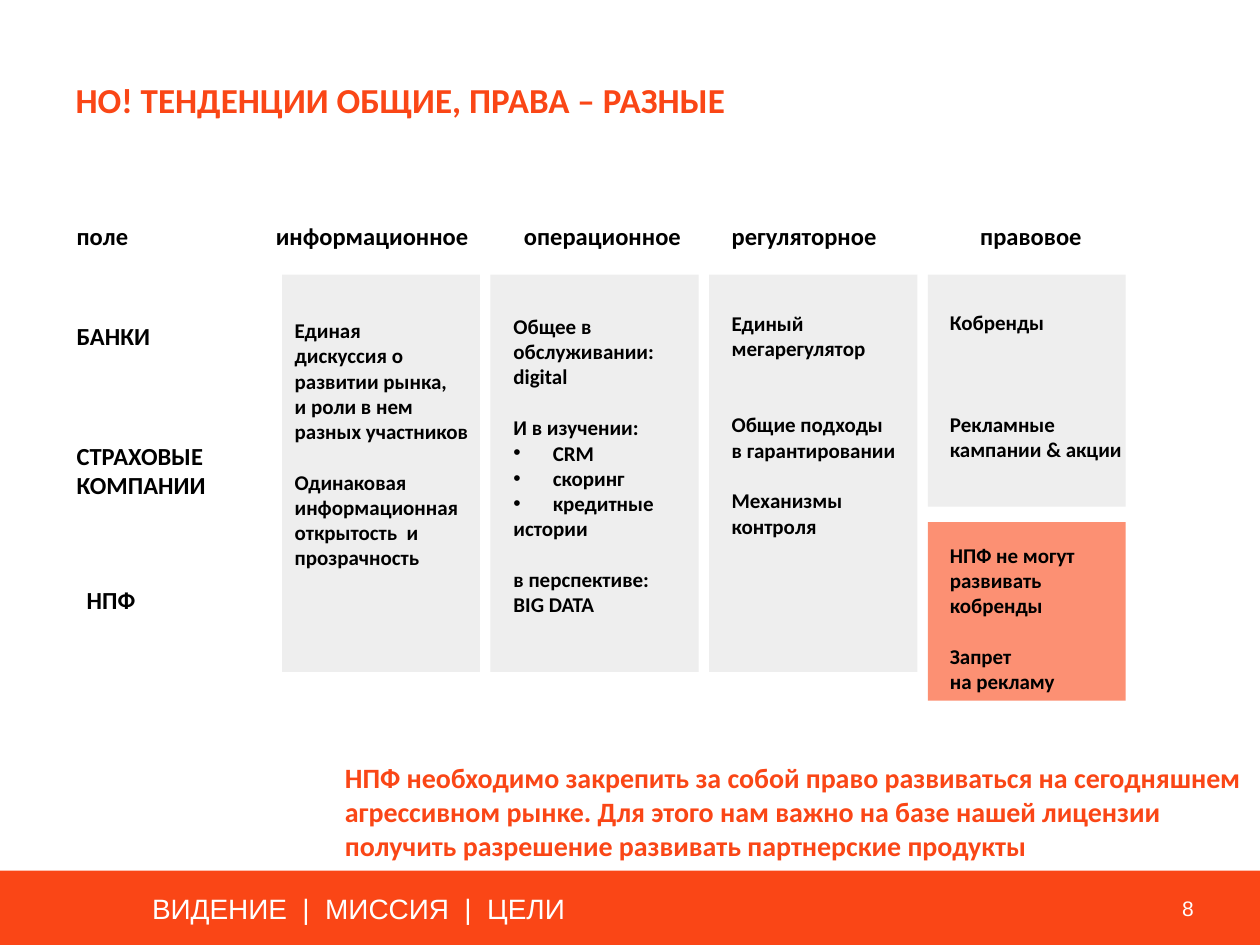
from lxml import etree
from pptx import Presentation
from pptx.dml.color import RGBColor
from pptx.enum.shapes import MSO_SHAPE
from pptx.enum.text import MSO_ANCHOR, PP_ALIGN
from pptx.oxml.ns import qn
from pptx.util import Pt

RECTANGLE = MSO_SHAPE.RECTANGLE
TOP = MSO_ANCHOR.TOP
LEFT, RIGHT = PP_ALIGN.LEFT, PP_ALIGN.RIGHT
ORANGE, SALMON, GRAY = "FA4616", "FC9073", "EEEEEE"
BLACK, WHITE = "000000", "FFFFFF"
BLANK_LINE = 14.65
BULLET_INDENT = 22.5
LABEL_WIDTH = 153.5
COLUMN_GAP = 6

BULLETED = {"CRM", "скоринг", "кредитные"}
COLUMNS = [
    {"header": "информационное", "header_left": 150.5, "width": 113, "height": 227,
     "text_left": 161.3, "text_top": 178,
     "groups": [(0, ["Единая", "дискуссия о", "развитии рынка,", "и роли в нем",
                     "разных участников"]),
                (1, ["Одинаковая", "информационная открытость  и прозрачность"])]},
    {"header": "операционное", "header_left": 292.3, "width": 119, "height": 227,
     "text_left": 286.3, "text_top": 175.7,
     "groups": [(0, ["Общее в", "обслуживании:", "digital"]),
                (1, ["И в изучении:", "CRM", "скоринг", "кредитные", "истории"]),
                (1, ["в перспективе:", "BIG DATA"])]},
    {"header": "регуляторное", "header_left": 411, "width": 119, "height": 227,
     "text_left": 411, "text_top": 173.7,
     "groups": [(0, ["Единый", "мегарегулятор"]),
                (2, ["Общие подходы", "в гарантировании"]),
                (1, ["Механизмы", "контроля"])]},
    {"header": "правовое", "header_left": 553, "width": 113, "height": 132.5,
     "text_left": 535.7, "text_top": 173.3,
     "groups": [(0, ["Кобренды"]), (3, ["Рекламные", "кампании & акции"])]},
]
RESTRICTIONS = [(0, ["НПФ не могут", "развивать", "кобренды"]),
                (1, ["Запрет", "на рекламу"])]
ROW_LABELS = [
    ("поле", 36.7, 123),
    ("БАНКИ", 36.7, 180),
    ("СТРАХОВЫЕ\nКОМПАНИИ", 36.7, 248.4),
    ("НПФ", 42.5, 330.5),
]


def color(value):
    """Turn a hex string into a colour."""
    return RGBColor.from_string(value)


def style(paragraph, size, hex_color, bold=True, font="Calibri"):
    """Format the runs of one paragraph."""
    for run in paragraph.runs:
        run.font.name = font
        run.font.size = Pt(size)
        run.font.bold = bold
        run.font.color.rgb = color(hex_color)


def add_panel(slide, box, fill):
    """Add a plain filled rectangle."""
    shape = slide.shapes.add_shape(RECTANGLE, *map(Pt, box))
    shape.shadow.inherit = False
    shape.fill.solid()
    shape.fill.fore_color.rgb = color(fill)
    shape.line.fill.background()


def add_label(slide, box, text, size, hex_color, bold=True, font="Calibri",
              alignment=LEFT, wrap=True):
    """Add a text box with uniformly formatted text."""
    text_frame = slide.shapes.add_textbox(*map(Pt, box)).text_frame
    text_frame.word_wrap = wrap
    text_frame.text = text
    for paragraph in text_frame.paragraphs:
        paragraph.alignment = alignment
        style(paragraph, size, hex_color, bold, font)


def add_bullet(paragraph):
    """Give a paragraph a hanging round bullet."""
    properties = paragraph._p.get_or_add_pPr()
    properties.set("marL", str(Pt(BULLET_INDENT)))
    properties.set("indent", str(-Pt(BULLET_INDENT)))
    etree.SubElement(properties, qn("a:buFont")).set("typeface", "Arial")
    etree.SubElement(properties, qn("a:buChar")).set("char", "•")


def add_groups(slide, box, groups):
    """Add groups of lines separated by paragraph spacing."""
    text_frame = slide.shapes.add_textbox(*map(Pt, box)).text_frame
    text_frame.word_wrap = True
    text_frame.text = "\n".join(line for _, lines in groups for line in lines)
    gaps = [gap if index == 0 else 0
            for gap, lines in groups for index in range(len(lines))]
    for paragraph, gap in zip(text_frame.paragraphs, gaps):
        if gap:
            paragraph.space_before = Pt(gap * BLANK_LINE)
        if paragraph.text in BULLETED:
            add_bullet(paragraph)
        style(paragraph, 12, BLACK)


def add_title(slide, box, text):
    """Place and format the title placeholder."""
    title = slide.shapes.title
    title.left, title.top, title.width, title.height = map(Pt, box)
    text_frame = title.text_frame
    text_frame.margin_left = text_frame.margin_right = 0
    text_frame.margin_top = text_frame.margin_bottom = 0
    text_frame.vertical_anchor = TOP
    text_frame.word_wrap = True
    text_frame.text = text
    paragraph = text_frame.paragraphs[0]
    paragraph.alignment = LEFT
    style(paragraph, 20, ORANGE)


def add_footer(slide, box):
    """Add the footer band with section names and page number."""
    left, top, width, height = box
    add_panel(slide, box, ORANGE)
    add_label(slide, (left + 80.5, top + 8.5, 253.5, 26.5),
              "ВИДЕНИЕ  |  МИССИЯ  |  ЦЕЛИ", 16, WHITE, False, "Arial", wrap=False)
    add_label(slide, (left + width - 61, top + 10.8, 29.5, 21.6), "8", 12,
              WHITE, False, "Arial", RIGHT, False)


def add_matrix(slide, box):
    """Add the four columns, their headers and the row labels."""
    left, top, width, height = box
    for column in COLUMNS:
        add_panel(slide, (left, top, column["width"], column["height"]), GRAY)
        add_label(slide, (column["header_left"], top - 34, LABEL_WIDTH, 24.5),
                  column["header"], 14, BLACK)
        add_groups(slide, (column["text_left"], column["text_top"], LABEL_WIDTH, 152),
                   column["groups"])
        left += column["width"] + COLUMN_GAP
    last = COLUMNS[-1]
    restriction_height = 102
    restriction_top = top + height - restriction_height
    add_panel(slide, (box[0] + width - last["width"], restriction_top,
                      last["width"], restriction_height), SALMON)
    add_groups(slide, (last["text_left"], restriction_top + 8, LABEL_WIDTH, 94),
               RESTRICTIONS)
    for text, label_left, label_top in ROW_LABELS:
        add_label(slide, (label_left, label_top, 102, 24.5), text, 14, BLACK)


def main():
    """Build and save the slide."""
    presentation = Presentation()
    presentation.slide_width, presentation.slide_height = Pt(720), Pt(540)
    slide = presentation.slides.add_slide(presentation.slide_layouts[5])
    add_footer(slide, (-0.7, 497.5, 721.4, 43))
    add_title(slide, (43.2, 44.6, 543.6, 24.5), "НО! ТЕНДЕНЦИИ ОБЩИЕ, ПРАВА – РАЗНЫЕ")
    add_matrix(slide, (161.3, 157, 482, 243.4))
    add_label(slide, (190, 431.3, 527, 65.5),
              "НПФ необходимо закрепить за собой право развиваться на сегодняшнем "
              "агрессивном рынке. Для этого нам важно на базе нашей лицензии "
              "получить разрешение развивать партнерские продукты", 16, ORANGE)
    presentation.save("out.pptx")


if __name__ == "__main__":
    main()
